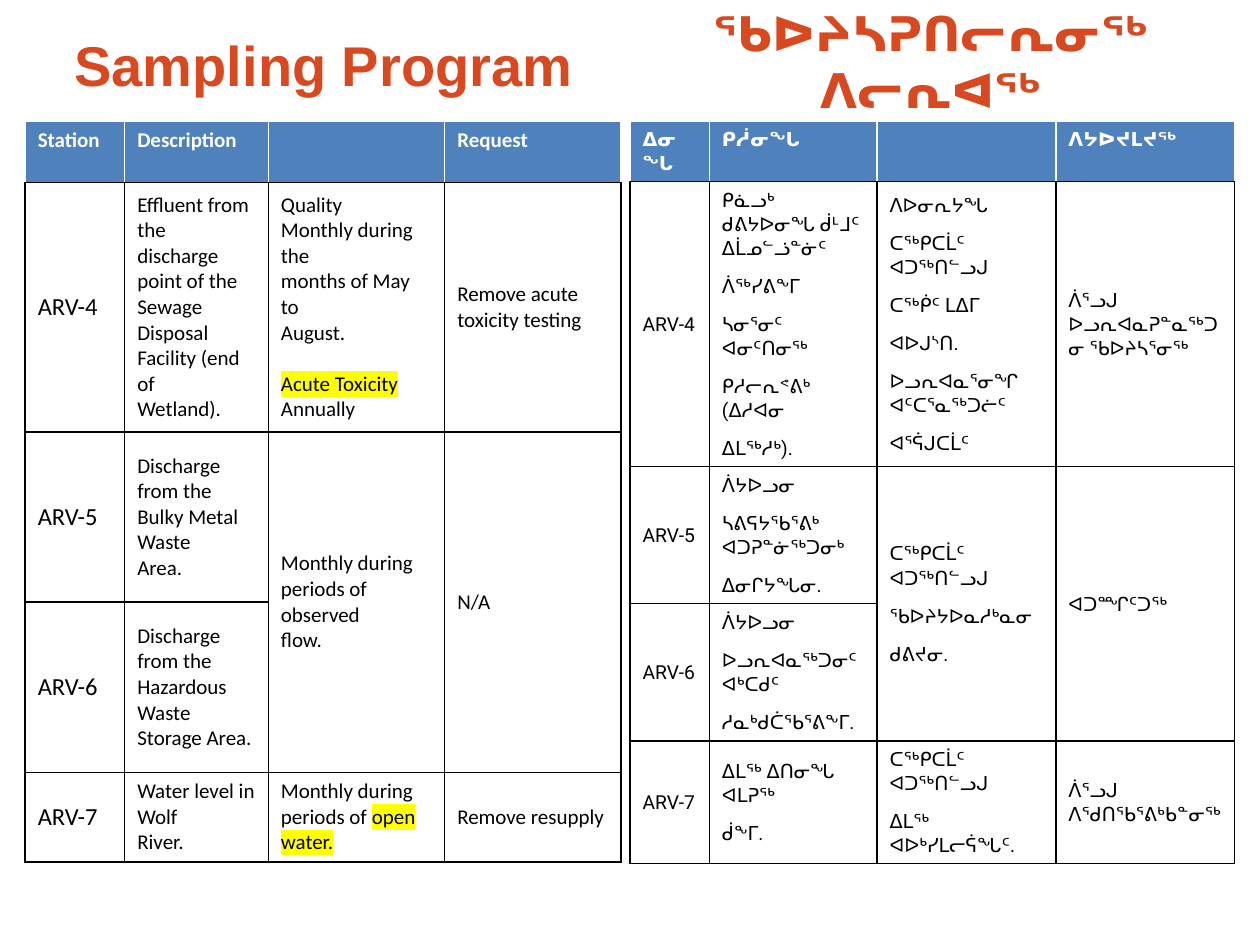
from lxml.etree import SubElement
from pptx import Presentation
from pptx.dml.color import RGBColor
from pptx.enum.text import MSO_ANCHOR, MSO_AUTO_SIZE, PP_ALIGN
from pptx.oxml.ns import qn
from pptx.util import Inches, Pt

ORANGE, BLUE, WHITE, BLACK, YELLOW = "D8491F", "4F81BD", "FFFFFF", "000000", "FFFF00"


def rgb(code):
    return RGBColor.from_string(code)


class Deck:
    """Holds the presentation, its style and the current slide.

    Lengths are in grid units: 100 columns by 75 rows on the slide.
    """

    def __init__(self):
        self.prs = Presentation()
        self.prs.slide_width, self.prs.slide_height = Inches(10), Inches(7.5)
        self.unit = self.prs.slide_width / 100
        self.s = self.prs.slides.add_slide(self.prs.slide_layouts[5])

    def grid(self, *lengths):
        return [round(n * self.unit) for n in lengths]

    def style(self, r, font, size, color, bold):
        r.font.size, r.font.bold = Pt(size), bold
        r.font.color.rgb = rgb(color)
        r.font.name = font

    def highlight(self, r):
        rPr = r.font._element
        mark = SubElement(rPr, qn("a:highlight"))
        SubElement(mark, qn("a:srgbClr"), val=YELLOW)
        rPr.find(qn("a:solidFill")).addnext(mark)

    def heading(self, sp, text, box, size):
        sp.left, sp.top, sp.width, sp.height = self.grid(*box)
        tf = sp.text_frame
        tf.text = text
        tf.word_wrap, tf.auto_size = True, MSO_AUTO_SIZE.NONE
        tf.vertical_anchor = MSO_ANCHOR.MIDDLE
        p = tf.paragraphs[0]
        p.alignment = PP_ALIGN.CENTER
        self.style(p.runs[0], "Arial", size, ORANGE, True)

    def title(self, text, box, size):
        self.heading(self.s.shapes.title, text, box, size)

    def second_title(self, text, box, size):
        self.heading(self.s.shapes.add_textbox(0, 0, 0, 0), text, box, size)

    def borders(self, cell, sides, bottom):
        tcPr = cell._tc.get_or_add_tcPr()
        colors = {"L": sides, "R": sides, "T": sides, "B": bottom}
        for i, (side, color) in enumerate(colors.items()):
            ln = SubElement(tcPr, qn(f"a:ln{side}"), w=str(Pt(1)))
            fill = SubElement(ln, qn("a:solidFill"))
            SubElement(fill, qn("a:srgbClr"), val=color)
            tcPr.insert(i, ln)

    def cell_text(self, cell, text, font, size, color, bold, spacing):
        """Lines part paragraphs, *stars* highlight, a leading ^ leaves a line's gap."""
        tf = cell.text_frame
        tf.text = text
        for p in tf.paragraphs:
            line = p.text
            p.text = ""
            if spacing:
                p.line_spacing, p.space_after = spacing[0], Pt(spacing[1])
            if line.startswith("^"):
                p.space_before = Pt(size * 1.22)
            for i, part in enumerate(line.lstrip("^").split("*")):
                if part:
                    r = p.add_run()
                    r.text = part
                    self.style(r, font, size, color, bold)
                    if i % 2:
                        self.highlight(r)

    def table(self, left, top, cols, rows, data, font, size, station_size, spacing=None):
        box = self.grid(left, top, sum(cols), sum(rows))
        t = self.s.shapes.add_table(len(rows), len(cols), *box).table
        t.horz_banding = False
        for col, width in zip(t.columns, self.grid(*cols)):
            col.width = width
        for row, height in zip(t.rows, self.grid(*rows)):
            row.height = height
        for i, texts in enumerate(data):
            for j, text in enumerate(texts):
                cell, head = t.cell(i, j), i == 0
                if head:
                    cell.fill.solid()
                    cell.fill.fore_color.rgb = rgb(BLUE)
                else:
                    cell.fill.background()
                    cell.vertical_anchor = MSO_ANCHOR.MIDDLE
                self.borders(cell, WHITE if head else BLACK, BLACK)
                if text:
                    pt = station_size if j == 0 and not head else size
                    self.cell_text(cell, text, font, pt, WHITE if head else BLACK, head, spacing)
                if text is None:
                    t.cell(i - 1, j).merge(cell)


ENGLISH = [
    ["Station", "Description", "", "Request"],
    ["ARV-4",
     "Effluent from the\ndischarge point of the\nSewage Disposal\nFacility (end of\nWetland).",
     "Quality\nMonthly during the\nmonths of May to\nAugust.\n^*Acute Toxicity*\nAnnually",
     "Remove acute toxicity testing"],
    ["ARV-5", "Discharge from the\nBulky Metal Waste\nArea.",
     "Monthly during\nperiods of observed\nflow.", "N/A"],
    ["ARV-6", "Discharge from the\nHazardous Waste\nStorage Area.", None, None],
    ["ARV-7", "Water level in Wolf\nRiver.",
     "Monthly during\nperiods of *open water.*", "Remove resupply"],
]
INUKTITUT = [
    ["ᐃᓂᖓ", "ᑭᓲᓂᖓ", "", "ᐱᔭᐅᔪᒪᔪᖅ"],
    ["ARV-4",
     "ᑭᓈᓗᒃ ᑯᕕᔭᐅᓂᖓ ᑰᒻᒧᑦ ᐃᒫᓄᓪᓘᓐᓃᑦ\nᐲᖅᓯᕕᖕᒥ\nᓴᓂᕐᓂᑦ ᐊᓂᑦᑎᓂᖅ\nᑭᓱᓕᕆᕝᕕᒃ (ᐃᓱᐊᓂ\nᐃᒪᖅᓱᒃ).",
     "ᐱᐅᓂᕆᔭᖓ\nᑕᖅᑭᑕᒫᑦ ᐊᑐᖅᑎᓪᓗᒍ\nᑕᖅᑮᑦ ᒪᐃᒥ\nᐊᐅᒍᔅᑎ.\nᐅᓗᕆᐊᓇᕐᓂᖏ ᐊᑦᑕᕐᓇᖅᑐᓖᑦ\nᐊᕐᕌᒍᑕᒫᑦ",
     "ᐲᕐᓗᒍ ᐅᓗᕆᐊᓇᕈᓐᓇᖅᑐᓂ ᖃᐅᔨᓴᕐᓂᖅ"],
    ["ARV-5", "ᐲᔭᐅᓗᓂ\nᓴᕕᕋᔭᖃᕐᕕᒃ ᐊᑐᕈᓐᓃᖅᑐᓂᒃ\nᐃᓂᒋᔭᖓᓂ.",
     "ᑕᖅᑭᑕᒫᑦ ᐊᑐᖅᑎᓪᓗᒍ\nᖃᐅᔨᔭᐅᓇᓱᒃᓇᓂ\nᑯᕕᔪᓂ.", "ᐊᑐᙱᑦᑐᖅ"],
    ["ARV-6", "ᐲᔭᐅᓗᓂ\nᐅᓗᕆᐊᓇᖅᑐᓂᑦ ᐊᒃᑕᑯᑦ\nᓱᓇᒃᑯᑖᖃᕐᕕᖕᒥ.", None, None],
    ["ARV-7", "ᐃᒪᖅ ᐃᑎᓂᖓ ᐊᒪᕈᖅ\nᑰᖕᒥ.",
     "ᑕᖅᑭᑕᒫᑦ ᐊᑐᖅᑎᓪᓗᒍ\nᐃᒪᖅ ᐊᐅᒃᓯᒪᓕᕌᖓᑦ.", "ᐲᕐᓗᒍ ᐱᖁᑎᖃᕐᕕᒃᑲᓐᓂᖅ"],
]


def main():
    deck = Deck()
    deck.title("Sampling Program", (2.2, 1.9, 47, 6.4), 32)
    deck.second_title("ᖃᐅᔨᓴᕈᑎᓕᕆᓂᖅ ᐱᓕᕆᐊᖅ", (50, 0.1, 47.8, 9.5), 27.3)
    deck.table(50, 9.6, (6.3, 13.3, 14.2, 14.2), (4.8, 21.9, 10.9, 10.9, 7.8),
               INUKTITUT, "Roboto", 11, 11, spacing=(1.07, 8))
    deck.table(2, 9.6, (7.9, 11.4, 14, 14), (4.9, 19.8, 13.5, 13.5, 7.1),
               ENGLISH, "Calibri", 12, 14)
    deck.prs.save("out.pptx")


if __name__ == "__main__":
    main()
